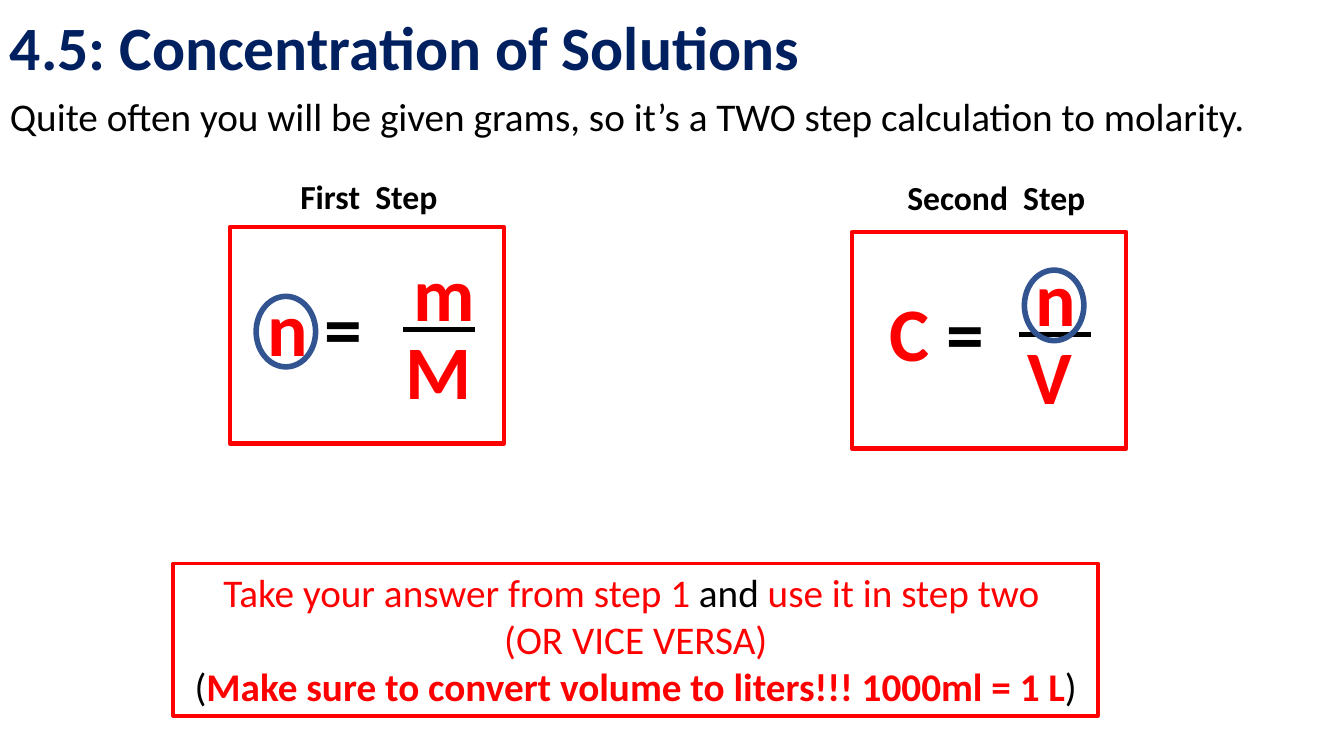
"""Build the slide on the two-step calculation of molarity."""
from dataclasses import dataclass

import pptx
import pptx.dml.color
import pptx.enum.shapes
import pptx.enum.text
import pptx.oxml
import pptx.util

COLUMNS, ROWS = 133.3, 75
CELL = pptx.util.Inches(0.1)


@dataclass(frozen=True)
class Theme:
    font: str = "Calibri"
    navy: str = "002060"
    black: str = "000000"
    red: str = "FF0000"
    blue: str = "325491"
    title: int = 44
    body: int = 28
    label: int = 24
    formula: int = 54
    bar: float = 4
    panel: float = 3
    note: float = 2.75


THEME = Theme()

TITLE = "4.5: Concentration of Solutions"
INTRO = "Quite often you will be given grams, so it’s a TWO step calculation to molarity."
STEPS = [
    {"label": "First  Step", "result": "n", "top": "m", "bottom": "M",
     "panel": (22.8, 22.5), "label_at": (6, -5.5), "bar_at": 17.2, "ring_at": (2.6, 6.9)},
    {"label": "Second  Step", "result": "C", "top": "n", "bottom": "V",
     "panel": (84.5, 23), "label_at": (4.5, -5.9), "bar_at": 16.6, "ring_at": (17.1, 3.8)},
]
NOTE = [
    [("Take your answer from step 1 ", THEME.red, False), ("and ", THEME.black, False),
     ("use it in step two ", THEME.red, False)],
    [("(OR VICE VERSA)", THEME.red, False)],
    [("(", THEME.black, False),
     ("Make sure to convert volume to liters!!! 1000ml = 1 L", THEME.red, True),
     (")", THEME.black, False)],
]

PANEL_SIZE = (27.2, 21.5)
RING_SIZE = (5.9, 7)
NOTE_BOX = (17.2, 55.9, 91.7, 15.1)
BAR_TOP, BAR_LENGTH = 10.2, 7.1


def cells(*lengths):
    return [round(length * CELL) for length in lengths]


def rgb(value):
    return pptx.dml.color.RGBColor.from_string(value)


def write(shape, paragraphs, size, align="LEFT", anchor="TOP", line_spacing=None):
    frame = shape.text_frame
    frame.word_wrap = True
    frame.vertical_anchor = getattr(pptx.enum.text.MSO_ANCHOR, anchor)
    for index, runs in enumerate(paragraphs):
        paragraph = frame.add_paragraph() if index else frame.paragraphs[0]
        paragraph.alignment = getattr(pptx.enum.text.PP_ALIGN, align)
        paragraph.line_spacing = line_spacing
        for text, color, bold in runs:
            run = paragraph.add_run()
            run.text = text
            run.font.name = THEME.font
            run.font.size = pptx.util.Pt(size)
            run.font.bold = bold
            run.font.color.rgb = rgb(color)


def add_text(slide, text, box, size, color=THEME.black, bold=False, **layout):
    runs = [(text, color, bold)] if isinstance(text, str) else text
    write(slide.shapes.add_textbox(*cells(*box)), [runs], size, **layout)


def add_outline(slide, kind, box, color, weight):
    preset = getattr(pptx.enum.shapes.MSO_SHAPE, kind)
    shape = slide.shapes.add_shape(preset, *cells(*box))
    shape.shadow.inherit = False
    shape.fill.background()
    shape.line.color.rgb = rgb(color)
    shape.line.width = pptx.util.Pt(weight)
    return shape


def add_bar(slide, left, top):
    ends = cells(left, top, left + BAR_LENGTH, top)
    bar = slide.shapes.add_connector(pptx.enum.shapes.MSO_CONNECTOR.STRAIGHT, *ends)
    bar.line.color.rgb = rgb(THEME.black)
    bar.line.width = pptx.util.Pt(THEME.bar)
    properties = bar.element.spPr
    properties.append(properties.makeelement(pptx.oxml.ns.qn("a:effectLst"), {}))


def add_step(slide, step):
    left, top = step["panel"]

    def inside(x, y, width, height):
        return left + x, top + y, width, height

    equation = [(step["result"] + " ", THEME.red, True), ("=", THEME.black, True)]
    symbol = {"size": THEME.formula, "color": THEME.red, "bold": True}
    add_text(slide, equation, inside(2.7, 4.9, 11.8, 10.1), THEME.formula)
    add_bar(slide, left + step["bar_at"], top + BAR_TOP)
    add_text(slide, step["bottom"], inside(16.4, 9.1, 8.1, 10.1), **symbol)
    add_text(slide, step["top"], inside(17.2, 1.4, 6.3, 10.1), **symbol)
    add_outline(slide, "RECTANGLE", (left, top, *PANEL_SIZE), THEME.red, THEME.panel)
    add_text(slide, step["label"], inside(*step["label_at"], 20.5, 5), THEME.label, bold=True)
    add_outline(slide, "OVAL", inside(*step["ring_at"], *RING_SIZE), THEME.blue, THEME.bar)


def main():
    presentation = pptx.Presentation()
    presentation.slide_width, presentation.slide_height = cells(COLUMNS, ROWS)
    slide = presentation.slides.add_slide(presentation.slide_layouts[6])
    add_text(slide, TITLE, (0, 0, 115, 10), THEME.title, THEME.navy, True,
             anchor="MIDDLE", line_spacing=0.9)
    add_text(slide, INTRO, (0, 8.7, 129.2, 5.7), THEME.body)
    for step in STEPS:
        add_step(slide, step)
    note = add_outline(slide, "RECTANGLE", NOTE_BOX, THEME.red, THEME.note)
    write(note, NOTE, THEME.body, align="CENTER")
    presentation.save("out.pptx")


if __name__ == "__main__":
    main()
